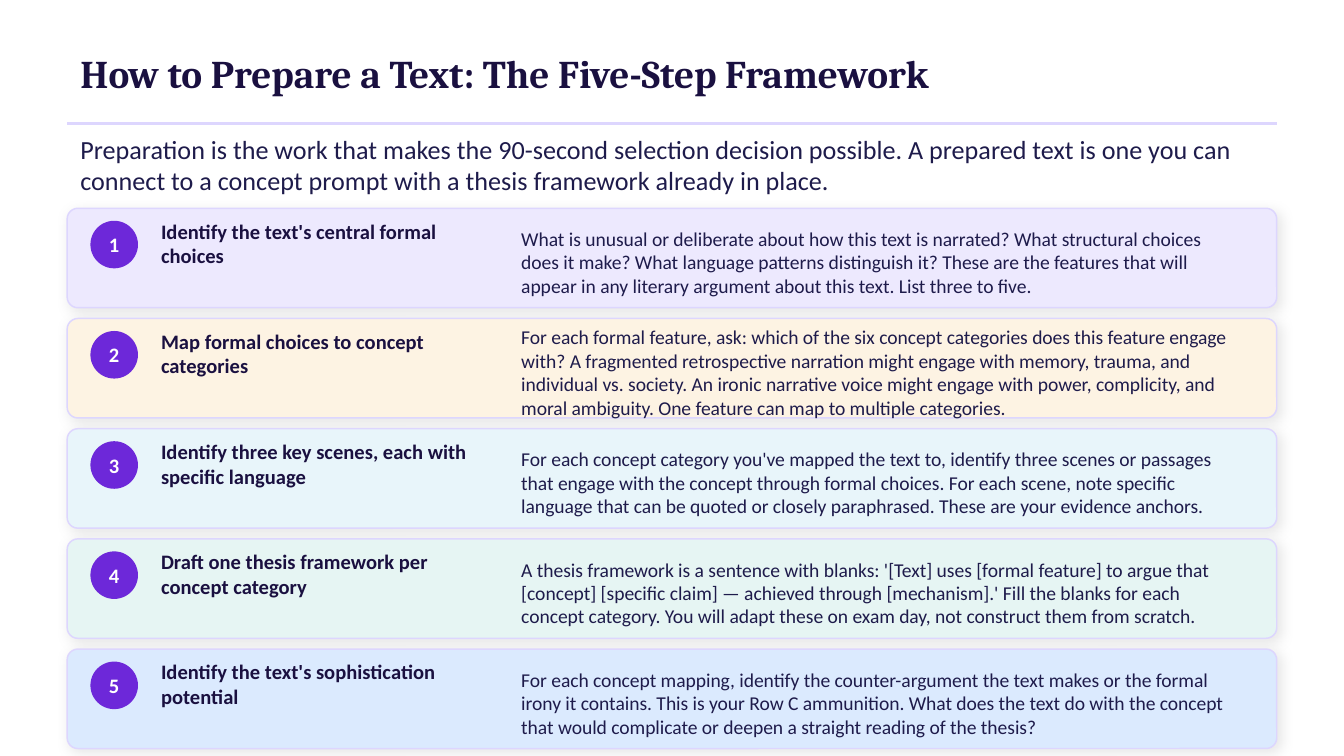
from lxml import etree
from pptx import Presentation
from pptx.dml.color import RGBColor
from pptx.enum.shapes import MSO_CONNECTOR, MSO_SHAPE
from pptx.enum.text import MSO_ANCHOR, PP_ALIGN
from pptx.oxml.ns import qn
from pptx.util import Inches, Pt

ROUNDED, OVAL = MSO_SHAPE.ROUNDED_RECTANGLE, MSO_SHAPE.OVAL
STRAIGHT = MSO_CONNECTOR.STRAIGHT
MIDDLE = MSO_ANCHOR.MIDDLE
LEFT, CENTER = PP_ALIGN.LEFT, PP_ALIGN.CENTER

INK = RGBColor(0x1A, 0x10, 0x40)
BODY = RGBColor(0x1E, 0x1B, 0x4B)
VIOLET = RGBColor(0x6D, 0x28, 0xD9)
LAVENDER = RGBColor(0xDD, 0xD6, 0xFE)
WHITE = RGBColor(0xFF, 0xFF, 0xFF)

TITLE = "How to Prepare a Text: The Five-Step Framework"
INTRO = ("Preparation is the work that makes the 90-second selection decision possible. "
         "A prepared text is one you can connect to a concept prompt with a thesis "
         "framework already in place.")
STEPS = [
    (RGBColor(0xED, 0xE9, 0xFE), "Identify the text's central formal choices",
     "What is unusual or deliberate about how this text is narrated? What structural "
     "choices does it make? What language patterns distinguish it? These are the features "
     "that will appear in any literary argument about this text. List three to five."),
    (RGBColor(0xFD, 0xF3, 0xE3), "Map formal choices to concept categories",
     "For each formal feature, ask: which of the six concept categories does this feature "
     "engage with? A fragmented retrospective narration might engage with memory, trauma, "
     "and individual vs. society. An ironic narrative voice might engage with power, "
     "complicity, and moral ambiguity. One feature can map to multiple categories."),
    (RGBColor(0xE8, 0xF5, 0xFA), "Identify three key scenes, each with specific language",
     "For each concept category you've mapped the text to, identify three scenes or "
     "passages that engage with the concept through formal choices. For each scene, note "
     "specific language that can be quoted or closely paraphrased. These are your evidence "
     "anchors."),
    (RGBColor(0xE6, 0xF5, 0xF3), "Draft one thesis framework per concept category",
     "A thesis framework is a sentence with blanks: '[Text] uses [formal feature] to argue "
     "that [concept] [specific claim] — achieved through [mechanism].' Fill the blanks for "
     "each concept category. You will adapt these on exam day, not construct them from "
     "scratch."),
    (RGBColor(0xDB, 0xEA, 0xFE), "Identify the text's sophistication potential",
     "For each concept mapping, identify the counter-argument the text makes or the formal "
     "irony it contains. This is your Row C ammunition. What does the text do with the "
     "concept that would complicate or deepen a straight reading of the thesis?"),
]

# Layout in inches
WIDTH, HEIGHT = 10, 10 * 9 / 16
MARGIN = 0.5
CONTENT_W = WIDTH - 2 * MARGIN
RULE_Y = 0.92
CARD_TOP, CARD_H, CARD_GAP = 1.55, 0.74, 0.08
BADGE_X, BADGE_SIZE = 0.68, 0.34
HEADING_X, HEADING_W = 1.1, 2.6
DETAIL_X, DETAIL_W = 3.78, 5.52


def write(shape, text, *, size, color, font="Calibri", bold=False, align=LEFT, inset=0.1):
    tf = shape.text_frame
    tf.word_wrap = True
    tf.vertical_anchor = MIDDLE
    tf.margin_left = tf.margin_right = Inches(inset)
    p = tf.paragraphs[0]
    p.alignment = align
    r = p.add_run()
    r.text = text
    r.font.name, r.font.size, r.font.bold = font, Pt(size), bold
    r.font.color.rgb = color


def add_text(s, x, y, w, h, text, **fmt):
    box = s.shapes.add_textbox(Inches(x), Inches(y), Inches(w), Inches(h))
    write(box, text, **fmt)


def add_box(s, kind, x, y, w, h, fill, line, line_width):
    sp = s.shapes.add_shape(kind, Inches(x), Inches(y), Inches(w), Inches(h))
    sp.shadow.inherit = False
    sp.fill.solid()
    sp.fill.fore_color.rgb = fill
    sp.line.color.rgb = line
    sp.line.width = Pt(line_width)
    return sp


def add_soft_shadow(sp):
    effects = sp._element.spPr.find(qn("a:effectLst"))
    shadow = etree.SubElement(effects, qn("a:outerShdw"), blurRad=str(Pt(7)),
                              dist=str(Pt(2)), dir=str(45 * 60000),
                              algn="bl", rotWithShape="0")
    color = etree.SubElement(shadow, qn("a:srgbClr"), val="000000")
    etree.SubElement(color, qn("a:alpha"), val="9000")


def add_rule(s, y):
    rule = s.shapes.add_connector(STRAIGHT, Inches(MARGIN), Inches(y),
                                  Inches(MARGIN + CONTENT_W), Inches(y))
    rule.line.color.rgb = LAVENDER
    rule.line.width = Pt(1.2)
    etree.SubElement(rule._element.spPr, qn("a:effectLst"))


def add_step(s, number, fill, heading, detail):
    top = CARD_TOP + (number - 1) * (CARD_H + CARD_GAP)
    card = add_box(s, ROUNDED, MARGIN, top, CONTENT_W, CARD_H, fill, LAVENDER, 0.8)
    card.adjustments[0] = 0.08 / CARD_H
    add_soft_shadow(card)
    badge = add_box(s, OVAL, BADGE_X, top + 0.1, BADGE_SIZE, BADGE_SIZE, VIOLET, VIOLET, 1)
    write(badge, str(number), size=11, color=WHITE, bold=True, align=CENTER, inset=0)
    add_text(s, HEADING_X, top + 0.08, HEADING_W, 0.36, heading,
             size=11, color=INK, bold=True)
    add_text(s, DETAIL_X, top + 0.08, DETAIL_W, 0.64, detail, size=10.5, color=BODY)


def main():
    prs = Presentation()
    prs.slide_width, prs.slide_height = Inches(WIDTH), Inches(HEIGHT)
    s = prs.slides.add_slide(prs.slide_layouts[6])
    s.background.fill.solid()
    s.background.fill.fore_color.rgb = WHITE
    add_text(s, MARGIN, 0.22, CONTENT_W, 0.65, TITLE,
             size=21, color=INK, font="Cambria", bold=True)
    add_rule(s, RULE_Y)
    add_text(s, MARGIN, 1, CONTENT_W, 0.45, INTRO, size=14, color=BODY)
    for number, step in enumerate(STEPS, 1):
        add_step(s, number, *step)
    prs.save("out.pptx")


if __name__ == "__main__":
    main()
